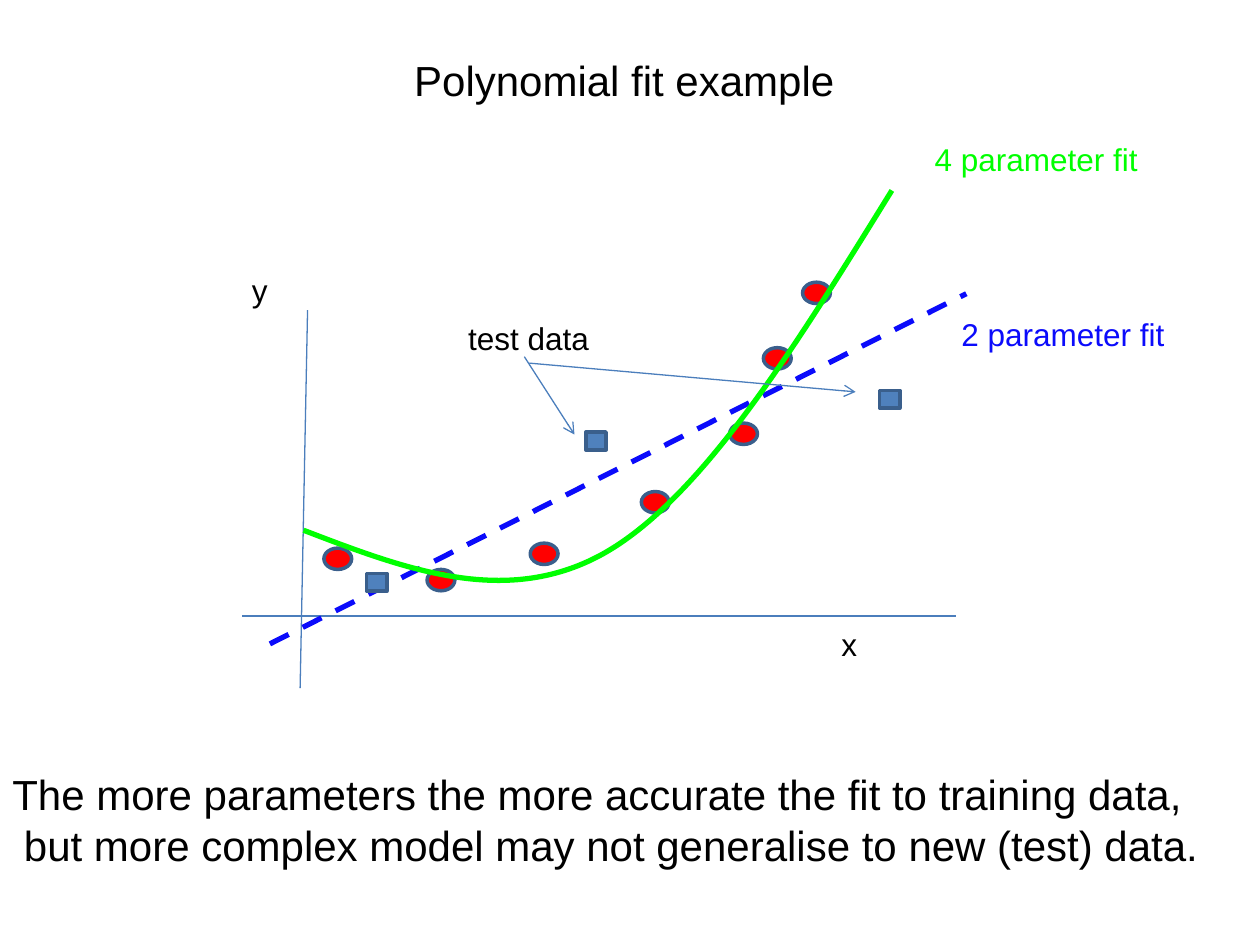
from dataclasses import dataclass

import pptx
import pptx.dml.color
import pptx.enum.dml
import pptx.enum.shapes
import pptx.enum.text
import pptx.oxml.ns
import pptx.oxml.xmlchemy
import pptx.util

Cm = pptx.util.Cm
Pt = pptx.util.Pt
qn = pptx.oxml.ns.qn
new_element = pptx.oxml.xmlchemy.OxmlElement
Shape = pptx.enum.shapes.MSO_SHAPE

BLACK = "000000"
GREEN = "00FF00"
BLUE = "0B0BFB"
AXIS = "4B7EBC"
OUTLINE = "3A5F8C"


@dataclass
class Line:
    start: tuple[float, float]
    end: tuple[float, float]
    color: str = AXIS
    width: float = 0.75
    dashed: bool = False
    arrow: bool = False


@dataclass
class Label:
    lines: list[str]
    left: float
    top: float
    width: float
    height: float = 1.02
    size: int = 18
    color: str = BLACK


@dataclass
class MarkerSeries:
    kind: Shape
    fill: str
    width: float
    height: float
    corners: list[tuple[float, float]]


FIT_LINES = [
    Line((6.2, 6.25), (6.05, 13.87)),
    Line((4.88, 12.42), (19.28, 12.42)),
    Line((5.44, 12.98), (19.48, 5.92), BLUE, 3, dashed=True),
]
ARROWS = [
    Line((10.57, 7.19), (11.58, 8.76), arrow=True),
    Line((10.67, 7.32), (17.25, 7.9), arrow=True),
]
TRAINING = MarkerSeries(Shape.OVAL, "FF0000", 0.56, 0.43, [
    (15.39, 7.01), (12.93, 9.91), (10.69, 10.95), (16.18, 5.69),
    (8.61, 11.48), (6.53, 11.05), (14.71, 8.53),
])
TEST = MarkerSeries(Shape.RECTANGLE, "4F81BD", 0.41, 0.36, [
    (11.81, 8.71), (17.73, 7.87), (7.39, 11.56),
])
CURVE_POINTS = [
    (6.12, 10.69),
    (8.18, 11.48), (10.24, 12.27), (12.22, 11.13),
    (14.2, 9.98), (16.08, 6.91), (17.98, 3.84),
]
LABELS = [
    Label(["The more parameters the more accurate the fit to training data,",
           " but more complex model may not generalise to new (test) data."],
          0, 15.37, 24.66, 2.31, 24),
    Label(["y"], 4.83, 5.33, 0.84),
    Label(["x"], 16.71, 12.47, 0.84),
    Label(["Polynomial fit example"], 8.1, 0.97, 9.07, 1.27, 24),
    Label(["4 parameter fit"], 18.59, 2.69, 4.65, color=GREEN),
    Label(["2 parameter fit"], 19.13, 6.22, 4.65, color=BLUE),
    Label(["test data"], 9.19, 6.3, 2.97),
]


def rgb(color: str) -> pptx.dml.color.RGBColor:
    return pptx.dml.color.RGBColor.from_string(color)


def set_line(line, color: str, width: float) -> None:
    line.color.rgb = rgb(color)
    line.width = Pt(width)


def draw_line(slide, item: Line) -> None:
    connector = slide.shapes.add_connector(
        pptx.enum.shapes.MSO_CONNECTOR.STRAIGHT,
        *map(Cm, item.start + item.end))
    set_line(connector.line, item.color, item.width)
    if item.dashed:
        connector.line.dash_style = pptx.enum.dml.MSO_LINE.DASH
    properties = connector._element.spPr
    if item.arrow:
        head = new_element("a:tailEnd")
        head.set("type", "arrow")
        properties.find(qn("a:ln")).append(head)
    properties.append(new_element("a:effectLst"))


def draw_markers(slide, series: MarkerSeries) -> None:
    for left, top in series.corners:
        shape = slide.shapes.add_shape(
            series.kind, Cm(left), Cm(top), Cm(series.width), Cm(series.height))
        shape.shadow.inherit = False
        shape.fill.solid()
        shape.fill.fore_color.rgb = rgb(series.fill)
        set_line(shape.line, OUTLINE, 2)


def draw_curve(slide, points: list[tuple[float, float]]) -> None:
    start, *others = [(Cm(x), Cm(y)) for x, y in points]
    builder = slide.shapes.build_freeform(*start)
    builder.add_line_segments(others, close=False)
    shape = builder.convert_to_shape()
    shape.shadow.inherit = False
    shape.fill.background()
    set_line(shape.line, GREEN, 3)
    segments = list(shape._element.iter(qn("a:lnTo")))
    for index in range(0, len(segments), 3):
        bezier = new_element("a:cubicBezTo")
        segments[index].addprevious(bezier)
        for segment in segments[index:index + 3]:
            bezier.append(segment[0])
            segment.getparent().remove(segment)


def draw_label(slide, label: Label) -> None:
    box = slide.shapes.add_textbox(
        Cm(label.left), Cm(label.top), Cm(label.width), Cm(label.height))
    frame = box.text_frame
    frame.word_wrap = False
    frame.auto_size = pptx.enum.text.MSO_AUTO_SIZE.SHAPE_TO_FIT_TEXT
    frame.text = "\n".join(label.lines)
    for paragraph in frame.paragraphs:
        paragraph.font.name = "Arial"
        paragraph.font.size = Pt(label.size)
        paragraph.font.color.rgb = rgb(label.color)


def main() -> None:
    presentation = pptx.Presentation()
    presentation.slide_width = Cm(25.4)
    presentation.slide_height = Cm(19.05)
    slide = presentation.slides.add_slide(presentation.slide_layouts[6])
    for line in FIT_LINES:
        draw_line(slide, line)
    draw_markers(slide, TRAINING)
    draw_curve(slide, CURVE_POINTS)
    draw_markers(slide, TEST)
    for label in LABELS:
        draw_label(slide, label)
    for arrow in ARROWS:
        draw_line(slide, arrow)
    presentation.save("out.pptx")


if __name__ == "__main__":
    main()
